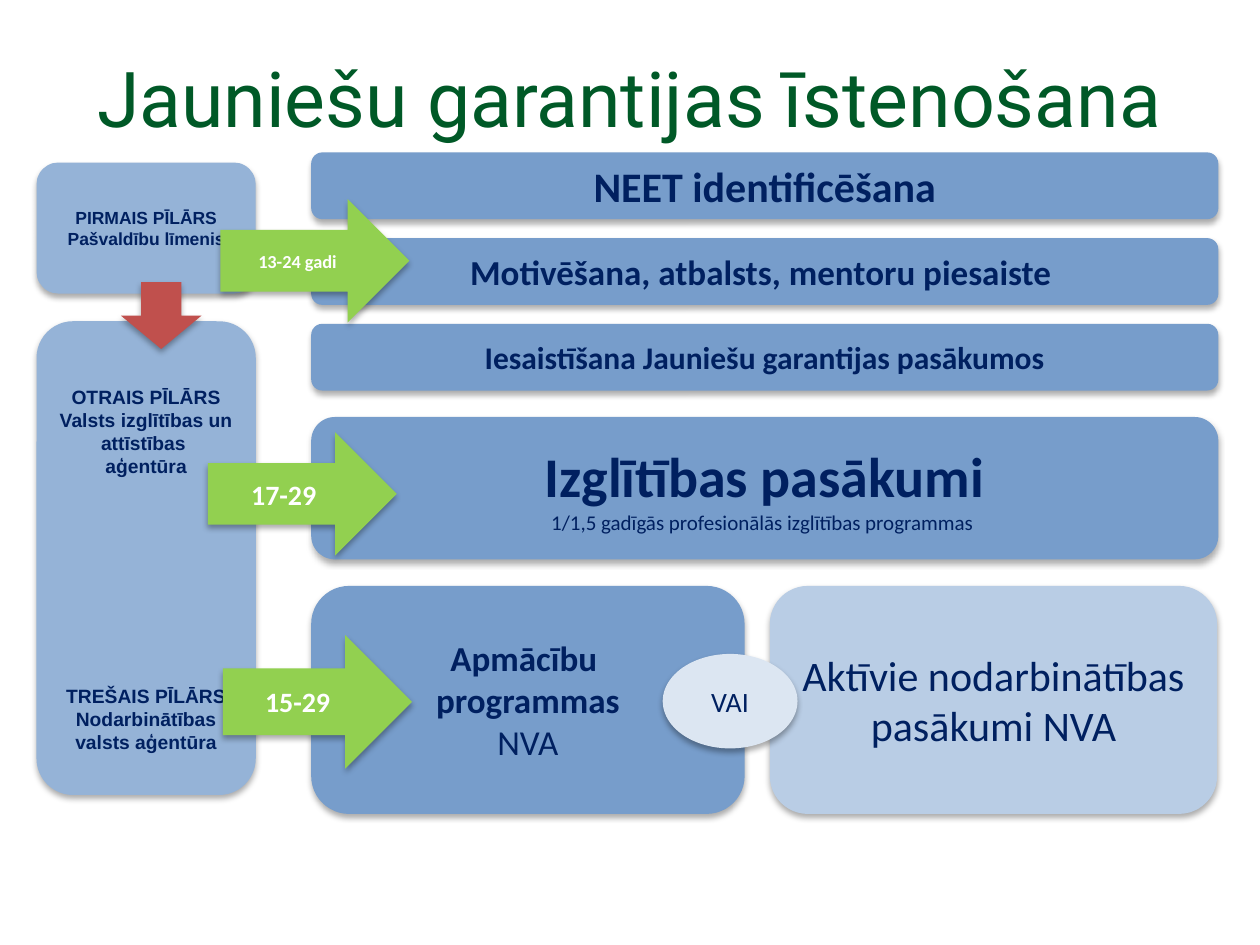
from lxml.etree import SubElement
from pptx import Presentation
from pptx.dml.color import RGBColor
from pptx.enum.shapes import MSO_SHAPE
from pptx.enum.text import MSO_ANCHOR, PP_ALIGN
from pptx.oxml.ns import qn
from pptx.util import Inches, Pt

COLORS = {
    "title": "005927", "navy": "002060", "white": "FFFFFF",
    "pillar": "95B3D7", "bar": "779DCB", "pale": "B9CDE5",
    "oval": "DCE6F2", "green": "92D050", "red": "C0504D",
}


class Board:
    def __init__(self, slide):
        self.slide = slide

    def color(self, name):
        return RGBColor.from_string(COLORS[name])

    def label(self, shape, lines, ink="navy", font="Calibri"):
        """Each line is (text, size, bold)."""
        frame = shape.text_frame
        frame.word_wrap = True
        frame.vertical_anchor = MSO_ANCHOR.MIDDLE
        frame.text = "\n".join(line[0] for line in lines)
        for par, (_, size, bold) in zip(frame.paragraphs, lines):
            par.alignment = PP_ALIGN.CENTER
            for run in par.runs:
                run.font.name = font
                run.font.size = Pt(size)
                run.font.bold = bold
                run.font.color.rgb = self.color(ink)
        return frame

    def title(self, text, *box):
        shape = self.slide.shapes.add_textbox(*map(Inches, box))
        self.label(shape, [(text, 44, False)], "title", "Roboto")

    def shadow(self, shape):
        shape.shadow.inherit = False
        effects = shape._element.spPr.find(qn("a:effectLst"))
        outer = SubElement(effects, qn("a:outerShdw"), blurRad=str(Pt(3.5)),
                           dist=str(Pt(2.2)), dir="5400000", rotWithShape="0")
        tone = SubElement(outer, qn("a:srgbClr"), val="000000")
        SubElement(tone, qn("a:alpha"), val="32000")

    def block(self, kind, fill, *box):
        shape = self.slide.shapes.add_shape(kind, *map(Inches, box))
        shape.fill.solid()
        shape.fill.fore_color.rgb = self.color(fill)
        shape.line.fill.background()
        self.shadow(shape)
        return shape

    def card(self, lines, fill, *box, font="Calibri"):
        shape = self.block(MSO_SHAPE.ROUNDED_RECTANGLE, fill, *box)
        return self.label(shape, lines, font=font)

    def arrow(self, text, size, *box):
        shape = self.block(MSO_SHAPE.RIGHT_ARROW, "green", *box)
        self.label(shape, [(text, size, True)], "white")

    def oval(self, text, *box):
        shape = self.block(MSO_SHAPE.OVAL, "oval", *box)
        self.label(shape, [(text, 16, False)])


def main():
    deck = Presentation()
    deck.slide_width, deck.slide_height = Inches(10), Inches(7.5)
    board = Board(deck.slides.add_slide(deck.slide_layouts[6]))
    board.title("Jauniešu garantijas īstenošana", 0.5, 0.3, 9, 0.93)

    # Pillars on the left
    left, wide = 0.29, 1.74
    first = ["PIRMAIS PĪLĀRS", "Pašvaldību līmenis"]
    board.card([(text, 10, True) for text in first], "pillar",
               left, 1.29, wide, 1.04, font="Arial")
    lower = ["OTRAIS PĪLĀRS", "Valsts izglītības un attīstības ", "aģentūra",
             "TREŠAIS PĪLĀRS", "Nodarbinātības", "valsts aģentūra"]
    frame = board.card([(text, 11, True) for text in lower], "pillar",
                       left, 2.55, wide, 3.76, font="Arial")
    frame.margin_top = Inches(0.23)
    frame.paragraphs[3].space_before = Pt(118)

    # Three steps of the first pillar
    col, span = 2.47, 7.2
    steps = [("NEET identificēšana", 24),
             ("Motivēšana, atbalsts, mentoru piesaiste ", 20),
             ("Iesaistīšana Jauniešu garantijas pasākumos", 18)]
    for row, (text, size) in enumerate(steps):
        board.card([(text, size, True)], "bar",
                   col, 1.21 + row * 0.68, span, 0.53)
    board.block(MSO_SHAPE.DOWN_ARROW, "red", 0.96, 2.24, 0.64, 0.53)

    # Education and training
    board.card([("Izglītības pasākumi", 32, True),
                ("1/1,5 gadīgās profesionālās izglītības programmas ", 12, False)],
               "bar", col, 3.31, span, 1.13)
    board.card([("Apmācību ", 20, True), ("programmas", 20, True),
                ("NVA", 20, False)], "bar", col, 4.65, 3.44, 1.81)

    # Age groups
    ages = [("15-29 ", 16, 1.77, 5.04, 1.06), ("17-29 ", 16, 1.65, 3.43, 0.98),
            ("13-24 gadi ", 10.5, 1.75, 1.58, 0.98)]
    for text, size, x, y, high in ages:
        board.arrow(text, size, x, y, 1.5, high)

    # Employment alternative
    board.card([("Aktīvie nodarbinātības pasākumi NVA", 24, False)], "pale",
               6.11, 4.65, 3.55, 1.81)
    board.oval("VAI", 5.26, 5.19, 1.07, 0.75)

    deck.save("out.pptx")


if __name__ == "__main__":
    main()
